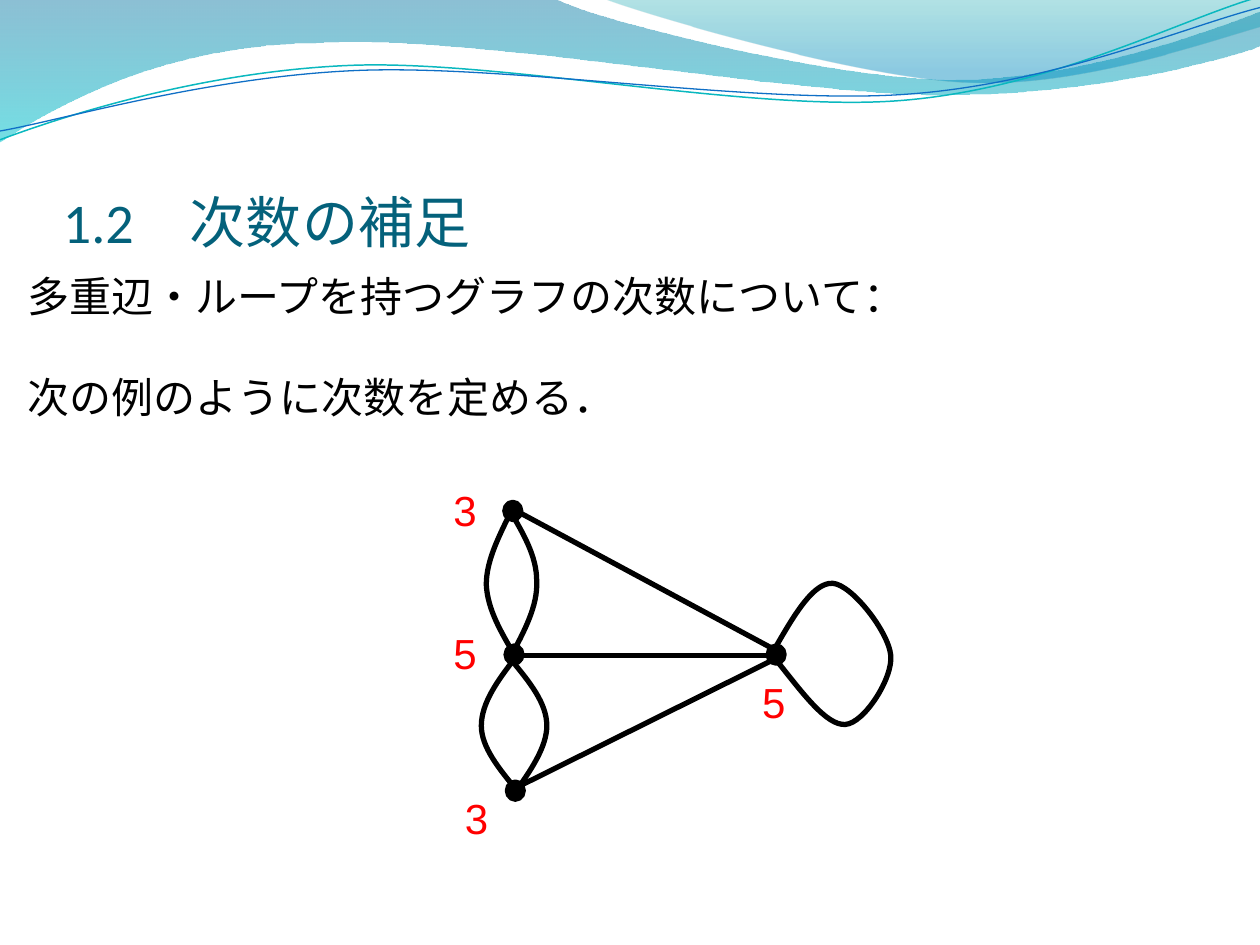
import pptx
import pptx.dml.color
import pptx.enum.shapes
import pptx.enum.text
import pptx.oxml
import pptx.oxml.ns
import pptx.util

Inches = pptx.util.Inches
Pt = pptx.util.Pt
qn = pptx.oxml.ns.qn

BLACK, RED, TEAL = "000000", "FF0000", "04617B"

# Each path is a start point, then segments: 2 numbers a line, 6 a Bezier curve.
WAVES = [
    ([(0, -0.01), (4.4, -0.01), (4.76, 0.17, 6.64, 0.63, 7.58, 0.63),
      (8.53, 0.63, 9.58, 0.26, 10, 0.09), (10.01, 0.36),
      (9.83, 0.44, 8.7, 0.76, 7.46, 0.75), (6.22, 0.75, 3.82, 0.28, 2.57, 0.34),
      (1.29, 0.35, 0.46, 0.83, -0.01, 1.13)],
     [(0, "0074A1", 45), (1, "00C6CF", 55)]),
    ([(4.79, -0.01), (5.09, 0.11, 6.82, 0.62, 7.69, 0.65),
      (8.56, 0.69, 9.61, 0.32, 10, 0.21), (10, 0)],
     [(0, "00A1A9", 30), (0.8, "008BBF", 45)]),
]
STRANDS = [
    ([(0, 1.11), (0.48, 0.93, 1.58, 0.57, 2.77, 0.52),
      (3.95, 0.47, 5.93, 0.89, 7.13, 0.8), (8.33, 0.71, 9.38, 0.15, 9.98, -0.02)],
     "0AB8BF", 0.85),
    ([(0, 1.04), (0.47, 0.96, 1.64, 0.61, 2.83, 0.56),
      (4.03, 0.51, 5.97, 0.83, 7.17, 0.75), (8.36, 0.67, 9.41, 0.21, 10, 0.06)],
     "0F6FC6", 0.75),
]
NODES = [(4, 3.98), (4.01, 5.12), (4.02, 6.2), (6.09, 5.12)]
EDGES = [(4.08, 5.2, 6.09, 5.2), (4.09, 4.05, 6.23, 5.2), (4.1, 6.25, 6.11, 5.25)]
ARCS = [
    [(4.07, 4.03), (3.97, 4.24, 3.86, 4.44, 3.86, 4.64),
     (3.87, 4.84, 3.98, 5.02, 4.09, 5.21)],
    [(4.09, 5.22), (3.95, 5.4, 3.82, 5.58, 3.82, 5.76),
     (3.82, 5.93, 3.96, 6.1, 4.1, 6.27)],
    [(4.05, 5.22), (4.16, 5.01, 4.27, 4.81, 4.26, 4.61),
     (4.26, 4.41, 4.15, 4.23, 4.04, 4.04)],
    [(4.08, 6.3), (4.21, 6.12, 4.34, 5.93, 4.34, 5.76),
     (4.34, 5.58, 4.2, 5.41, 4.06, 5.24)],
    [(6.16, 5.13), (6.31, 4.87, 6.46, 4.62, 6.61, 4.63),
     (6.76, 4.64, 7.05, 5.01, 7.07, 5.2), (7.09, 5.38, 6.86, 5.74, 6.71, 5.75),
     (6.56, 5.76, 6.37, 5.5, 6.17, 5.25)],
]
DEGREES = [("3", 3.5, 3.8), ("3", 3.59, 6.24), ("5", 3.5, 4.93), ("5", 5.95, 5.32)]


def rgb(code):
    return pptx.dml.color.RGBColor.from_string(code)


def set_line(shape, color, width):
    shape.line.color.rgb = rgb(color)
    shape.line.width = Pt(width)


def add_path(slide, path, close=False):
    """Draw a freeform whose six-number segments become Bezier curves."""
    pairs = [list(zip(seg[::2], seg[1::2])) for seg in path]
    points = [(Inches(x), Inches(y)) for seg in pairs for x, y in seg]
    build = slide.shapes.build_freeform(*points[0], scale=1.0)
    build.add_line_segments(points[1:], close=close)
    shape = build.convert_to_shape()
    shape.shadow.inherit = False
    steps = iter(list(shape.element.iter(qn("a:lnTo"))))
    for seg in pairs[1:]:
        group = [next(steps) for _ in seg]
        if len(group) == 3:
            curve = pptx.oxml.parse_xml(
                f"<a:cubicBezTo {pptx.oxml.ns.nsdecls('a')}/>")
            group[0].addprevious(curve)
            for step in group:
                curve.append(step[0])
                step.getparent().remove(step)
    return shape


def add_wave(slide, path, stops):
    shape = add_path(slide, path, close=True)
    shape.line.fill.background()
    shape.fill.gradient()
    shape.fill.gradient_angle = 270
    for stop, (place, color, _) in zip(shape.fill.gradient_stops, stops):
        stop.position = place
        stop.color.rgb = rgb(color)
    for mark, (_, _, alpha) in zip(shape.element.iter(qn("a:srgbClr")), stops):
        mark.append(pptx.oxml.parse_xml(
            f'<a:alpha {pptx.oxml.ns.nsdecls("a")} val="{alpha * 1000}"/>'))


def add_curve(slide, path, color=BLACK, width=3):
    shape = add_path(slide, path)
    shape.fill.background()
    set_line(shape, color, width)


def add_edge(slide, ends):
    kind = pptx.enum.shapes.MSO_CONNECTOR.STRAIGHT
    edge = slide.shapes.add_connector(kind, *map(Inches, ends))
    set_line(edge, BLACK, 3)
    edge.element.spPr.append(pptx.oxml.parse_xml(
        f"<a:effectLst {pptx.oxml.ns.nsdecls('a')}/>"))


def add_node(slide, left, top):
    node = slide.shapes.add_shape(
        pptx.enum.shapes.MSO_SHAPE.OVAL,
        Inches(left), Inches(top), Inches(0.14), Inches(0.15))
    node.shadow.inherit = False
    node.fill.solid()
    node.fill.fore_color.rgb = rgb(BLACK)
    set_line(node, BLACK, 2)


def add_text(slide, text, box, size=24, font="Calibri", color=BLACK, wrap=True,
             bottom=False, inset=None, gap=0):
    """Add a text box; gap is the space in points between its paragraphs."""
    shape = slide.shapes.add_textbox(*map(Inches, box))
    frame = shape.text_frame
    frame.word_wrap = wrap
    if not wrap:
        frame.auto_size = pptx.enum.text.MSO_AUTO_SIZE.SHAPE_TO_FIT_TEXT
    if bottom:
        frame.vertical_anchor = pptx.enum.text.MSO_ANCHOR.BOTTOM
    if inset:
        (frame.margin_left, frame.margin_top,
         frame.margin_right, frame.margin_bottom) = map(Inches, inset)
    frame.text = text
    for index, para in enumerate(frame.paragraphs):
        if index:
            para.space_before = Pt(gap)
        for run in para.runs:
            run.font.size = Pt(size)
            run.font.name = font
            run.font.color.rgb = rgb(color)
            run.font._element.append(pptx.oxml.parse_xml(
                f'<a:ea {pptx.oxml.ns.nsdecls("a")} typeface="{font}"/>'))


def main():
    deck = pptx.Presentation()
    deck.slide_width, deck.slide_height = Inches(10), Inches(7.5)
    slide = deck.slides.add_slide(deck.slide_layouts[6])
    for path, stops in WAVES:
        add_wave(slide, path, stops)
    for path, color, width in STRANDS:
        add_curve(slide, path, color, width)
    add_text(slide, "1.2　次数の補足", (0.5, 0.77, 9, 1.25), size=32, color=TEAL,
             bottom=True, inset=(0, 0.05, 0, 0))
    add_text(slide, "多重辺・ループを持つグラフの次数について：\n次の例のように次数を定める．",
             (0.12, 2.1, 9.8, 4.8), gap=29)
    for spot in NODES:
        add_node(slide, *spot)
    for ends in EDGES:
        add_edge(slide, ends)
    for path in ARCS:
        add_curve(slide, path)
    for text, left, top in DEGREES:
        add_text(slide, text, (left, top, 0.39, 0.5), font="Arial", color=RED,
                 wrap=False)
    deck.save("out.pptx")


if __name__ == "__main__":
    main()
